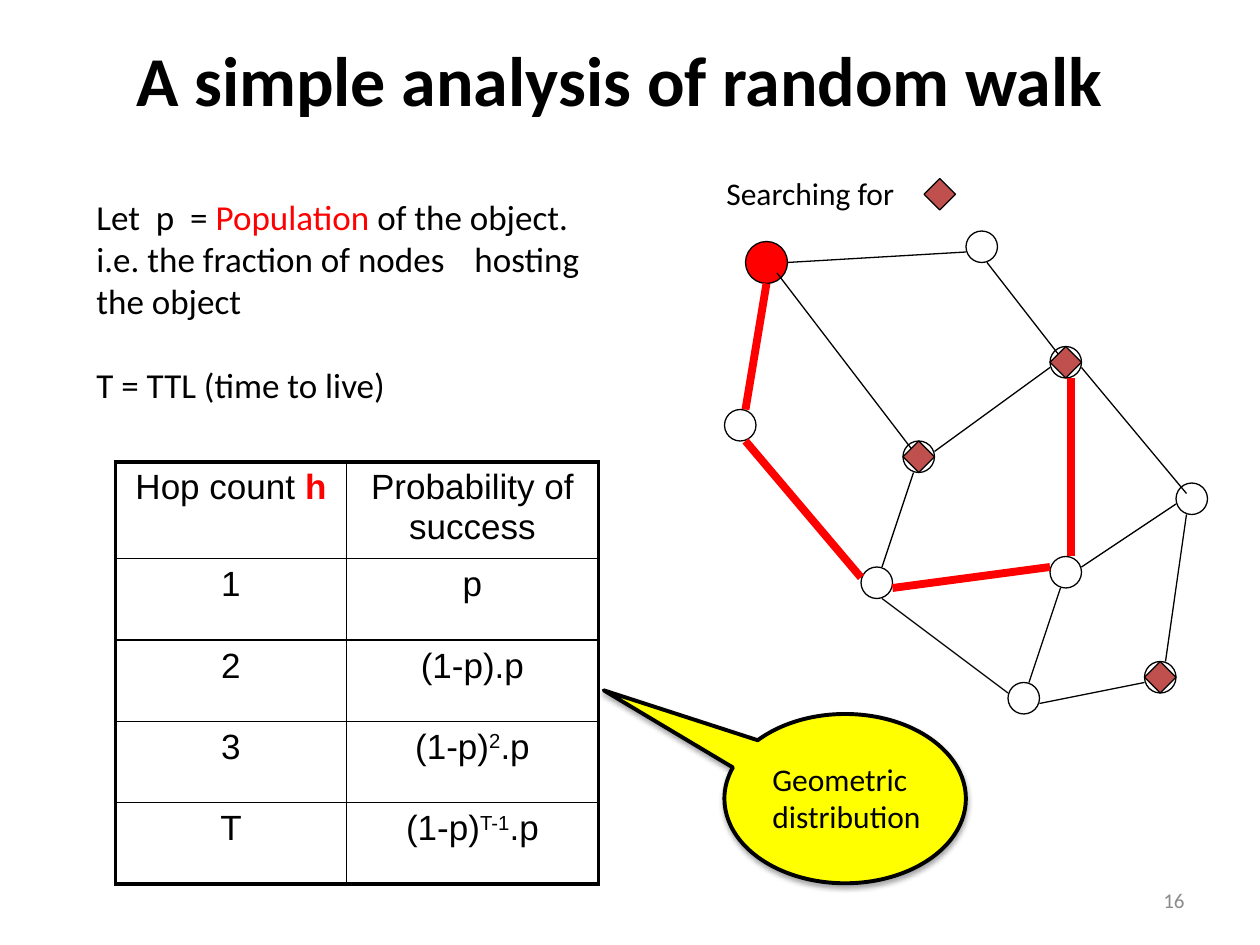
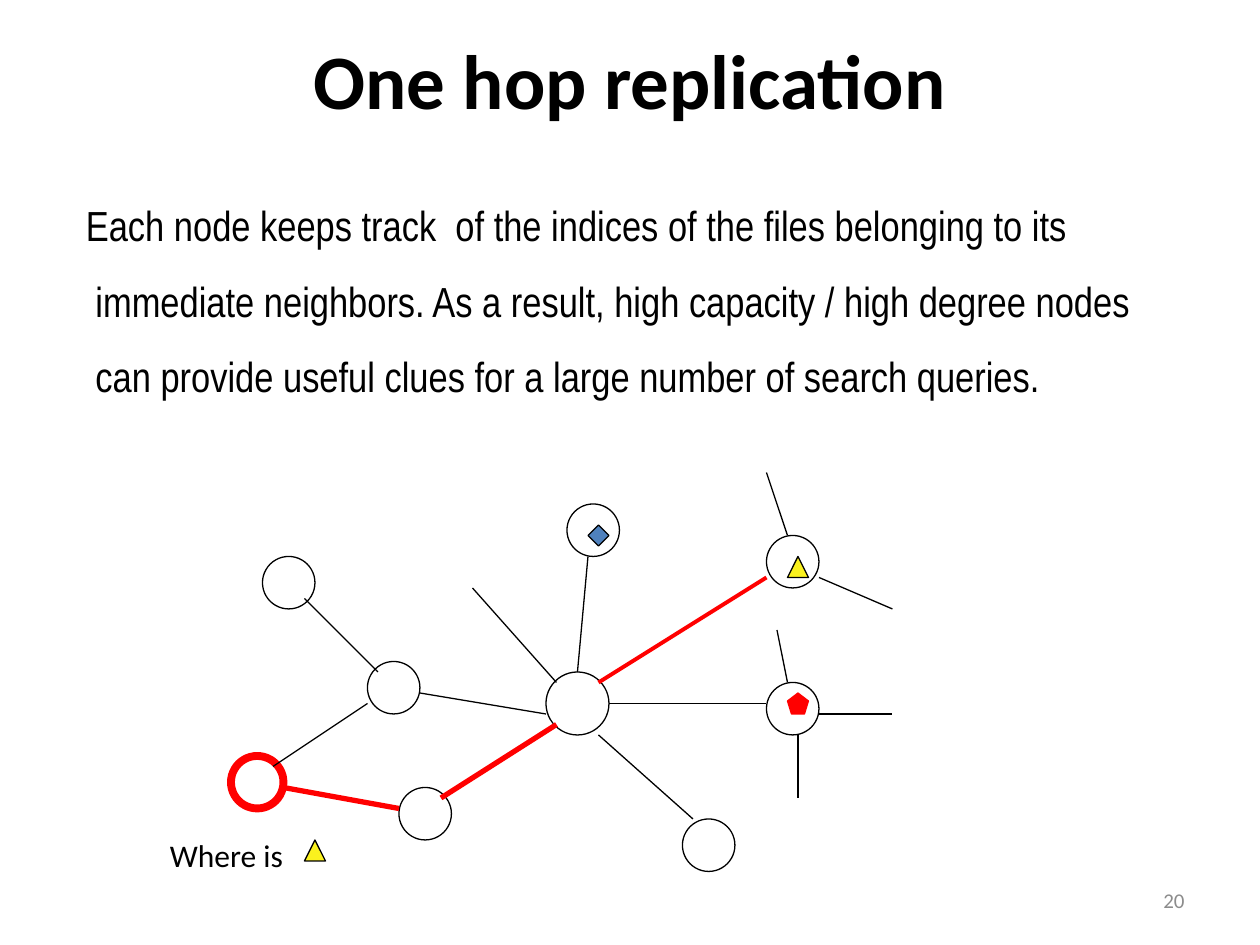
"""Build two slides on random walks and one hop replication."""
from lxml import etree
from pptx import Presentation, util as u
from pptx.dml.color import RGBColor
from pptx.enum import shapes, text
from pptx.oxml import ns

PX = 9525
BLACK = RGBColor(0, 0, 0)
RED = RGBColor(255, 0, 0)
GRAY = RGBColor(0x8C, 0x8C, 0x8C)
BRICK = RGBColor(0xC0, 0x50, 0x4D)
BLUE = RGBColor(0x4F, 0x81, 0xBD)
LEMON = RGBColor(0xFA, 0xF1, 0x1E)
YELLOW = RGBColor(255, 255, 0)

KIND = shapes.MSO_SHAPE
LEFT, MID, RIGHT = text.PP_ALIGN.LEFT, text.PP_ALIGN.CENTER, text.PP_ALIGN.RIGHT
THIN, BOLD = 0.75, 4.5

INTRO = [
    [("Let  p  = ", ""), ("Population", "red"),
     (" of the object. \ti.e. the fraction of nodes \thosting the object", "")],
    [("T = TTL (time to live)", "")],
]
ROWS = [
    ([("Hop count ", ""), ("h", "red bold")], "Probability of success"),
    ("1", "p"),
    ("2", "(1-p).p"),
    ("3", [("(1-p)", ""), ("2", "sup"), (".p", "")]),
    ("T", [("(1-p)", ""), ("T-1", "sup"), (".p", "")]),
]
COLS, HEAD, ROW = (176, 192), 73, 62

WALK_START = (568, 184)
WALK_NODES = [(688, 336), (552, 312), (736, 176), (656, 432), (800, 264),
              (800, 424), (768, 520), (872, 504), (896, 368)]
WALK_GOALS = [(800, 264), (688, 336), (872, 504), (704, 136)]
WALK_LINKS = [
    (600, 200, 736, 192), (592, 208, 696, 344), (696, 360, 672, 432),
    (712, 344, 800, 280), (808, 448, 784, 520), (672, 456, 768, 528),
    (824, 280, 904, 376), (824, 432, 896, 384), (904, 392, 888, 504),
    (792, 536, 872, 520), (752, 200, 808, 272),
]
WALK_ROUTE = [(584, 216, 568, 312), (568, 336, 656, 440),
              (680, 448, 800, 432), (816, 288, 816, 424)]

CLUES = [
    "Each node keeps track  of the indices of the files belonging to its",
    " immediate neighbors. As a result, high capacity / high degree nodes",
    " can provide useful clues for a large number of search queries.",
]
HUB, ASKER = (416, 512), (176, 576)
HOP_NODES = [(584, 408), (520, 624), (432, 384), (584, 520),
             (280, 504), (200, 424), (304, 600)]
HOP_LINKS = [
    (464, 536, 584, 536), (440, 512, 448, 424), (424, 520, 360, 448),
    (416, 544, 320, 528), (456, 560, 528, 624), (600, 408, 584, 360),
    (624, 440, 680, 464), (600, 520, 592, 480), (624, 544, 680, 544),
    (608, 560, 608, 608), (232, 456, 288, 512), (208, 584, 280, 536),
]
HOP_ROUTE = [(216, 600, 304, 616, 3), (424, 552, 336, 608, 3),
             (456, 520, 584, 440, 2.25)]
HOP_FILES = [
    (KIND.DIAMOND, (448, 400), BLUE, BLACK),
    (KIND.ISOSCELES_TRIANGLE, (600, 424), LEMON, BLACK),
    (KIND.REGULAR_PENTAGON, (600, 528), RED, RED),
    (KIND.ISOSCELES_TRIANGLE, (232, 640), LEMON, BLACK),
]


def px(*nums):
    return [u.Emu(n * PX) for n in nums]


def write(frame, paras, size, font="Calibri", color=BLACK, align=LEFT, bold=False):
    for i, parts in enumerate(paras):
        para = frame.paragraphs[0] if i == 0 else frame.add_paragraph()
        para.alignment = align
        for words, style in [(parts, "")] if isinstance(parts, str) else parts:
            run = para.add_run()
            run.text = words
            run.font.size, run.font.name = u.Pt(size), font
            run.font.bold = bold or "bold" in style
            run.font.color.rgb = RED if "red" in style else color
            if "sup" in style:
                run.font._element.set("baseline", "30000")


def label(slide, box, paras, size, wrap=False, middle=False, **look):
    frame = slide.shapes.add_textbox(*px(*box)).text_frame
    frame.word_wrap = wrap
    if middle:
        frame.vertical_anchor = text.MSO_ANCHOR.MIDDLE
    write(frame, paras, size, **look)
    return frame


def mark(slide, kind, spot, size, fill=None, line=BLACK, width=THIN):
    wide, high = size if isinstance(size, tuple) else (size, size)
    shape = slide.shapes.add_shape(kind, *px(*spot, wide, high))
    shape.shadow.inherit = False
    if fill is None:
        shape.fill.background()
    else:
        shape.fill.solid()
        shape.fill.fore_color.rgb = fill
    shape.line.color.rgb = line
    shape.line.width = u.Pt(width)
    return shape


def link(slide, ends, color=BLACK, width=THIN):
    line = slide.shapes.add_connector(shapes.MSO_CONNECTOR.STRAIGHT, *px(*ends))
    line.line.color.rgb = color
    line.line.width = u.Pt(width)
    etree.SubElement(line._element.spPr, ns.qn("a:effectLst"))


def shade(shape):
    effects = shape._element.spPr.find(ns.qn("a:effectLst"))
    cast = etree.SubElement(effects, ns.qn("a:outerShdw"), blurRad="39370",
                            dist="22860", dir="5400000", rotWithShape="0")
    tint = etree.SubElement(cast, ns.qn("a:srgbClr"), val=str(BLACK))
    etree.SubElement(tint, ns.qn("a:alpha"), val="35000")


def edge(cell, side, width):
    line = etree.SubElement(cell._tc.get_or_add_tcPr(), ns.qn("a:ln" + side),
                            w=str(u.Pt(width)))
    fill = etree.SubElement(line, ns.qn("a:solidFill"))
    etree.SubElement(fill, ns.qn("a:srgbClr"), val=str(BLACK))


def grid(slide, left, top):
    high = HEAD + ROW * (len(ROWS) - 1)
    table = slide.shapes.add_table(
        len(ROWS), len(COLS), *px(left, top, sum(COLS), high)).table
    table.first_row = table.horz_banding = False
    for col, wide in zip(table.columns, COLS):
        col.width = u.Emu(wide * PX)
    for r, row in enumerate(ROWS):
        table.rows[r].height = u.Emu((ROW if r else HEAD) * PX)
        for c, parts in enumerate(row):
            cell = table.cell(r, c)
            outer = {"L": c == 0, "R": c == len(COLS) - 1,
                     "T": r == 0, "B": r == len(ROWS) - 1}
            for side, rim in outer.items():
                edge(cell, side, 2.25 if rim else 1)
            cell.fill.background()
            write(cell.text_frame, [parts], 20, font="Arial", align=MID)


def start(deck, title, left, size, number):
    slide = deck.slides.add_slide(deck.slide_layouts[6])
    label(slide, (688, 667, 224, 38), [number], 12, True, True,
          color=GRAY, align=RIGHT)
    label(slide, (left, 0, 816, 120), [title], size, True, True,
          align=MID, bold=True)
    return slide


def walk(deck):
    slide = start(deck, "A simple analysis of random walk", 64, 40, "16")
    intro = label(slide, (64, 144, 416, 204), INTRO, 20, True)
    intro.paragraphs[1].space_before = u.Pt(24)
    mark(slide, KIND.OVAL, WALK_START, 32, RED)
    for spot in WALK_NODES:
        mark(slide, KIND.OVAL, spot, 24)
    for ends in WALK_LINKS:
        link(slide, ends)
    for ends in WALK_ROUTE:
        link(slide, ends, RED, BOLD)
    for spot in WALK_GOALS:
        mark(slide, KIND.DIAMOND, spot, 24, BRICK)
    grid(slide, 88, 352)
    label(slide, (544, 128, 158, 36), ["Searching for"], 18)
    bubble = mark(slide, KIND.OVAL_CALLOUT, (552, 544), (184, 129), YELLOW, width=2.25)
    bubble.adjustments[0], bubble.adjustments[1] = -1, -0.64
    shade(bubble)
    label(slide, (579, 574, 133, 68), ["Geometric", "distribution"], 18)


def hop(deck):
    slide = start(deck, "One hop replication", 72, 44, "20")
    clues = label(slide, (56, 128, 816, 182), CLUES, 24, font="Arial Narrow")
    for para in clues.paragraphs:
        para.line_spacing = 1.5
    mark(slide, KIND.OVAL, HUB, 48)
    mark(slide, KIND.OVAL, ASKER, 40, line=RED, width=BOLD)
    for spot in HOP_NODES:
        mark(slide, KIND.OVAL, spot, 40)
    for ends in HOP_LINKS:
        link(slide, ends)
    for *ends, width in HOP_ROUTE:
        link(slide, ends, RED, width)
    for kind, spot, fill, line in HOP_FILES:
        mark(slide, kind, spot, 16, fill, line)
    label(slide, (120, 632, 116, 39), ["Where is"], 18)


def main():
    deck = Presentation()
    deck.slide_width, deck.slide_height = px(960, 720)
    walk(deck)
    hop(deck)
    deck.save("out.pptx")


if __name__ == "__main__":
    main()
